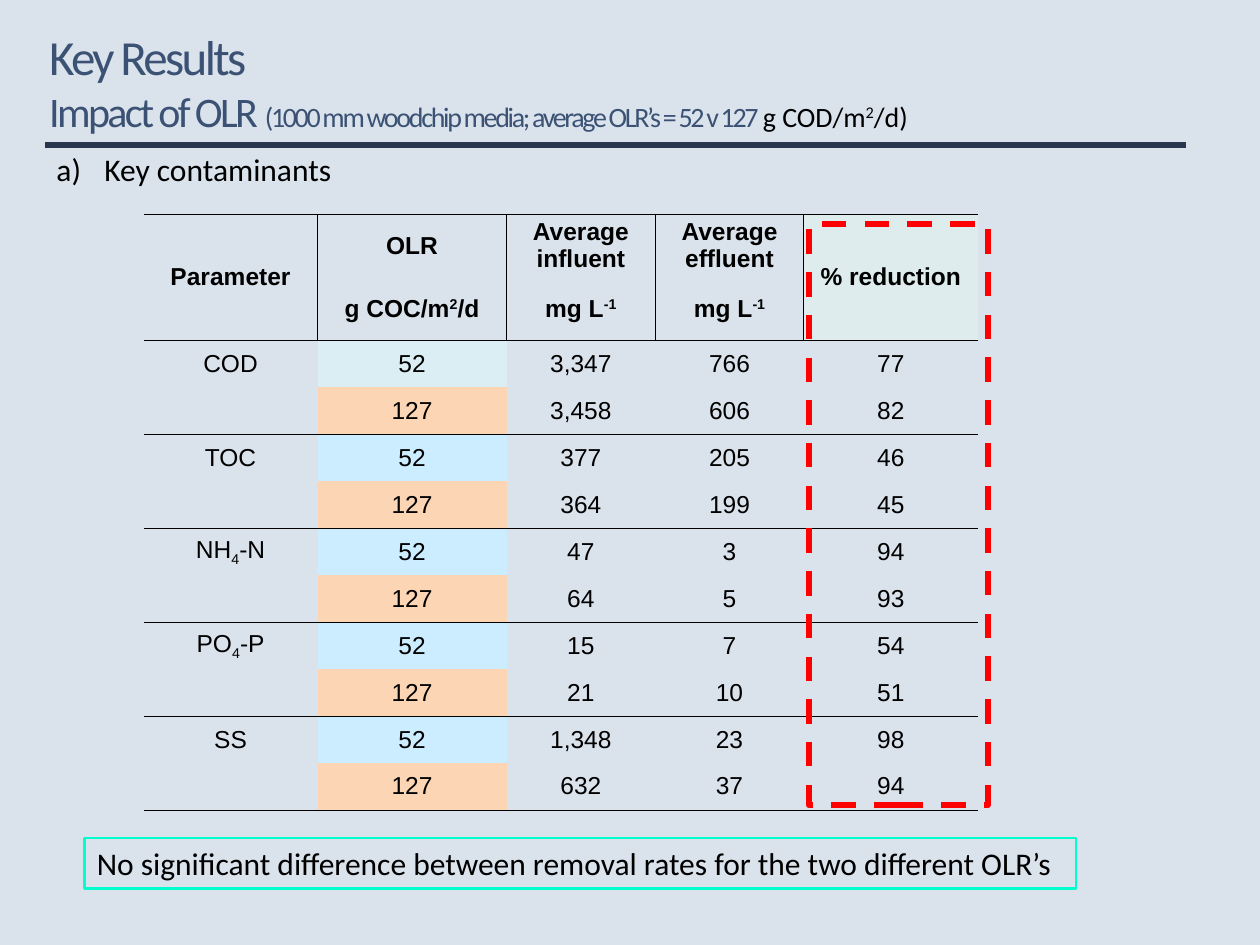
from lxml import etree
from pptx import Presentation, util as u
from pptx.dml.color import RGBColor
from pptx.enum import dml, shapes, text
from pptx.oxml import ns

COLUMNS, ROWS = 100, 75
WIDTH, HEIGHT = u.Inches(10), u.Inches(7.5)

BACKGROUND = RGBColor(0xDA, 0xE2, 0xEC)
NAVY = RGBColor(0x28, 0x37, 0x4E)
TITLE_BLUE = RGBColor(0x3B, 0x52, 0x74)
BLACK = RGBColor(0, 0, 0)
RED = RGBColor(0xFF, 0, 0)
TURQUOISE = RGBColor(0, 0xFF, 0xCC)
REDUCTION_FILL = RGBColor(0xDE, 0xEC, 0xEE)
COD_FILL = RGBColor(0xDA, 0xEE, 0xF3)
LOW_FILL = RGBColor(0xCC, 0xEC, 0xFF)
HIGH_FILL = RGBColor(0xFC, 0xD5, 0xB4)

BODY = {"name": "Calibri", "size": u.Pt(18)}
CELL = {"name": "Arial", "size": u.Pt(14), "bold": False}
HEADER = {**CELL, "bold": True}
NO_STYLE = "{2D5ABB26-0587-4C30-8999-92F81FD0307C}"
BASELINES = {"^": "30000", "_": "-25000"}

COLUMN_WIDTHS = [13.8, 15, 11.8, 11.8, 13.8]
ROW_HEIGHTS = [5, 5] + [3.73] * 10
# In cell text, | parts the runs; ^ and _ open a raised or lowered run.
TABLE = [
    ["Parameter", "OLR", "Average influent", "Average effluent", "% reduction"],
    ["", "g COC/m|^2|/d", "mg L|^-1", "mg L|^-1", ""],
    ["COD", "52", "3,347", "766", "77"],
    ["", "127", "3,458", "606", "82"],
    ["TOC", "52", "377", "205", "46"],
    ["", "127", "364", "199", "45"],
    ["NH|_4|-N", "52", "47", "3", "94"],
    ["", "127", "64", "5", "93"],
    ["PO|_4|-P", "52", "15", "7", "54"],
    ["", "127", "21", "10", "51"],
    ["SS", "52", "1,348", "23", "98"],
    ["", "127", "632", "37", "94"],
]


def across(columns):
    return round(WIDTH * columns / COLUMNS)


def down(rows):
    return round(HEIGHT * rows / ROWS)


def place(left, top, width, height):
    """Turn grid columns and rows into slide lengths."""
    return across(left), down(top), across(width), down(height)


def assign(target, values):
    for name, value in values.items():
        setattr(target, name, value)


def add_runs(paragraph, marked_text, format_values, color=BLACK, spacing=0):
    for part in marked_text.split("|"):
        run = paragraph.add_run()
        run.text = part.lstrip("^_")
        assign(run.font, format_values)
        run.font.color.rgb = color
        properties = run._r.get_or_add_rPr()
        if spacing:
            properties.set("spc", str(spacing))
        if part[:1] in BASELINES:
            properties.set("baseline", BASELINES[part[0]])


def add_title(slide, box):
    title = slide.shapes.title
    assign(title, dict(zip(("left", "top", "width", "height"), box)))
    assign(title.text_frame, {
        "margin_left": 0, "margin_right": 0, "margin_top": 0, "margin_bottom": 0,
        "word_wrap": True, "auto_size": text.MSO_AUTO_SIZE.NONE,
        "vertical_anchor": text.MSO_ANCHOR.TOP})
    paragraph = title.text_frame.paragraphs[0]
    paragraph.alignment = text.PP_ALIGN.LEFT
    small = {**BODY, "size": u.Pt(16)}
    add_runs(paragraph, "Key Results", {**BODY, "size": u.Pt(28)}, TITLE_BLUE, -150)
    paragraph.add_line_break()
    add_runs(paragraph, "Impact of OLR ", {**BODY, "size": u.Pt(24)}, TITLE_BLUE, -150)
    add_runs(paragraph, "(1000 mm woodchip media; average OLR’s = 52 v 127 ",
             small, TITLE_BLUE, -130)
    add_runs(paragraph, "g COD/m|^2|/d)", small)


def add_rule(slide, box):
    left, top, width, height = box
    rule = slide.shapes.add_connector(
        shapes.MSO_CONNECTOR.STRAIGHT, left, top, left + width, top + height)
    rule.line.color.rgb = NAVY
    rule.line.width = u.Pt(3)
    etree.SubElement(rule._element.spPr, ns.qn("a:effectLst"))


def add_subheading(slide, box):
    frame = slide.shapes.add_textbox(*box).text_frame
    frame.word_wrap = True
    paragraph = frame.paragraphs[0]
    properties = paragraph._p.get_or_add_pPr()
    properties.set("marL", str(across(3.8)))
    properties.set("indent", str(-across(3.8)))
    etree.SubElement(properties, ns.qn("a:buFont"), typeface="+mj-lt")
    etree.SubElement(properties, ns.qn("a:buAutoNum"), type="alphaLcParenR")
    add_runs(paragraph, "Key contaminants", BODY)


def add_frame(slide, box, color, weight):
    """Add an unfilled rectangle with a coloured outline."""
    frame = slide.shapes.add_shape(shapes.MSO_SHAPE.RECTANGLE, *box)
    frame.shadow.inherit = False
    frame.fill.background()
    frame.line.color.rgb = color
    frame.line.width = u.Pt(weight)
    return frame


def add_conclusion(slide, box):
    frame = add_frame(slide, box, TURQUOISE, 1.5).text_frame
    assign(frame, {"word_wrap": True, "vertical_anchor": text.MSO_ANCHOR.TOP})
    paragraph = frame.paragraphs[0]
    paragraph.alignment = text.PP_ALIGN.LEFT
    add_runs(paragraph, "No significant difference between removal rates "
             "for the two different OLR’s", BODY)


def add_borders(cell, sides):
    properties = cell._tc.get_or_add_tcPr()
    for side in sides:
        border = etree.SubElement(properties, ns.qn("a:ln" + side), w=str(u.Pt(0.5)))
        fill = etree.SubElement(border, ns.qn("a:solidFill"))
        etree.SubElement(fill, ns.qn("a:srgbClr"), val=str(BLACK))


def cell_sides(cell, row, column):
    sides = ""
    if row < 2:
        sides += "L" if column > 0 else ""
        sides += "R" if column < len(COLUMN_WIDTHS) - 1 else ""
    sides += "T" if row == 0 else ""
    return sides + ("B" if row % 2 or cell.is_merge_origin else "")


def cell_fill(row, column):
    if row < 2:
        return REDUCTION_FILL if column == 4 else None
    if column != 1:
        return None
    if row % 2:
        return HIGH_FILL
    return COD_FILL if row == 2 else LOW_FILL


def add_results_table(slide, box):
    table_frame = slide.shapes.add_table(len(ROW_HEIGHTS), len(COLUMN_WIDTHS), *box)
    table = table_frame.table
    table._tbl.tblPr.find(ns.qn("a:tableStyleId")).text = NO_STYLE
    assign(table, {"first_row": False, "horz_banding": False})
    for column, width in zip(table.columns, COLUMN_WIDTHS):
        column.width = across(width)
    for row, height in zip(table.rows, ROW_HEIGHTS):
        row.height = down(height)
    for column in (0, 4):
        table.cell(0, column).merge(table.cell(1, column))
    for row, values in enumerate(TABLE):
        for column, value in enumerate(values):
            cell = table.cell(row, column)
            assign(cell, {"margin_left": 0, "margin_right": 0, "margin_top": 0,
                          "margin_bottom": 0, "vertical_anchor": text.MSO_ANCHOR.MIDDLE})
            add_borders(cell, cell_sides(cell, row, column))
            color = cell_fill(row, column)
            if color is None:
                cell.fill.background()
            else:
                cell.fill.solid()
                cell.fill.fore_color.rgb = color
            paragraph = cell.text_frame.paragraphs[0]
            paragraph.alignment = text.PP_ALIGN.CENTER
            if value:
                add_runs(paragraph, value, HEADER if row < 2 else CELL)


def main():
    presentation = Presentation()
    assign(presentation, {"slide_width": WIDTH, "slide_height": HEIGHT})
    slide = presentation.slides.add_slide(presentation.slide_layouts[5])
    slide.background.fill.solid()
    slide.background.fill.fore_color.rgb = BACKGROUND
    add_title(slide, place(3.9, 2.1, 91.7, 13.5))
    add_rule(slide, place(3.6, 11.5, 90.5, 0))
    add_subheading(slide, place(3.5, 11.4, 26, 4))
    add_conclusion(slide, place(6.7, 66.5, 78.7, 4))
    add_results_table(slide, place(11.4, 17, sum(COLUMN_WIDTHS), sum(ROW_HEIGHTS)))
    highlight = add_frame(slide, place(64.2, 17.8, 14.2, 46.1), RED, 3.5)
    highlight.line.dash_style = dml.MSO_LINE.DASH
    presentation.save("out.pptx")


if __name__ == "__main__":
    main()
